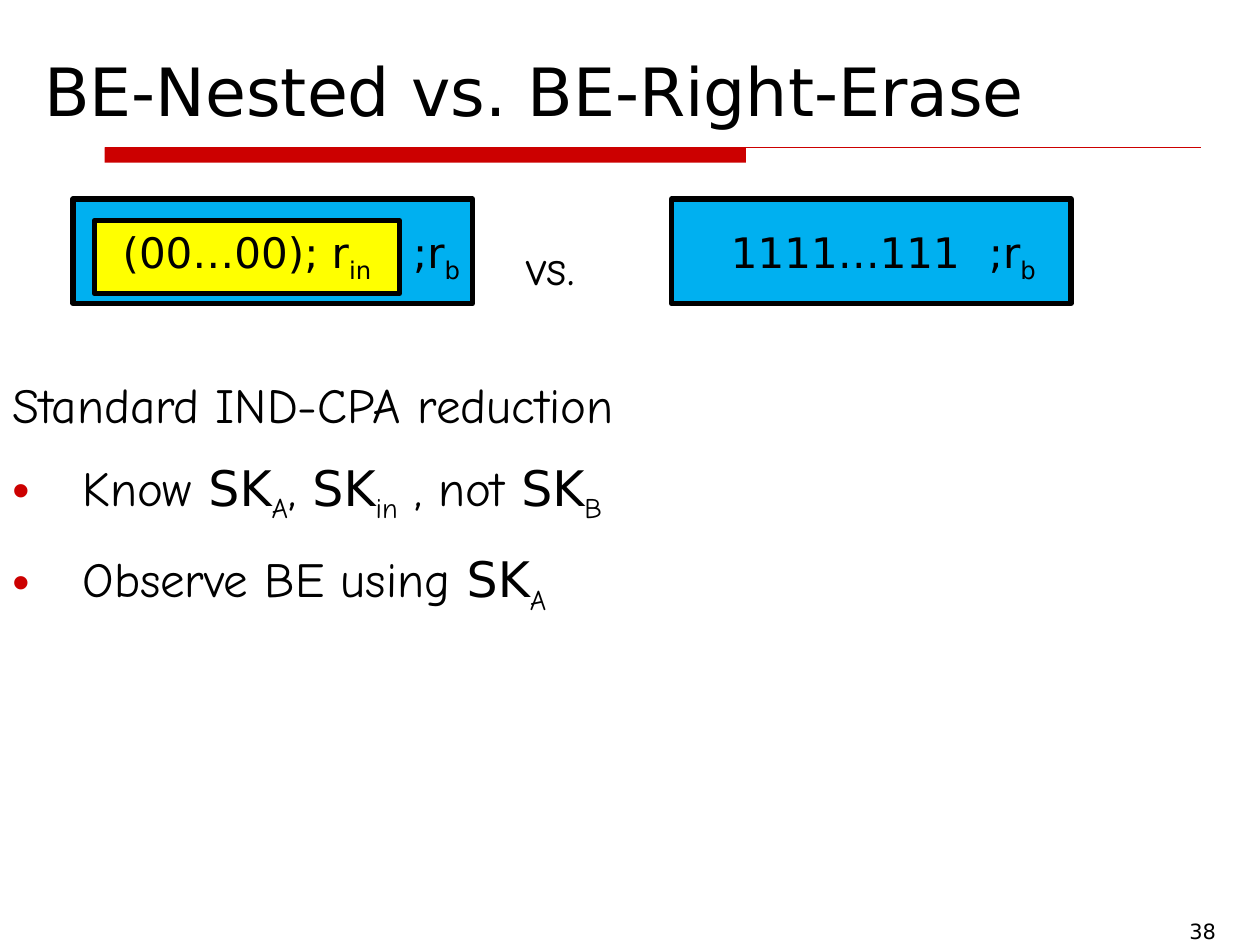
import dataclasses

import pptx
import pptx.dml.color
import pptx.enum.shapes
import pptx.enum.text
import pptx.oxml.ns
import pptx.util
from lxml import etree
from pptx.util import Inches

ALIGN = pptx.enum.text.PP_ALIGN
ANCHOR = pptx.enum.text.MSO_ANCHOR


@dataclasses.dataclass(frozen=True)
class Theme:
    """Colours, fonts and type sizes of the deck."""
    ink: str = "000000"
    accent: str = "CC0000"
    outer: str = "00B0F0"
    inner: str = "FFFF00"
    sans: str = "DejaVu Sans"
    hand: str = "Comic Neue"
    title: int = 38
    body: int = 28
    label: int = 24
    number: int = 12


THEME = Theme()


def color(value):
    """Turn a hex string into a colour."""
    return pptx.dml.color.RGBColor.from_string(value)


def add_child(parent, tag, **attributes):
    """Append a DrawingML element to a parent and return it."""
    return etree.SubElement(parent, pptx.oxml.ns.qn(tag), attributes)


def format_paragraph(paragraph, spaced, bullet):
    """Give a paragraph its hanging indent, space before and bullet."""
    properties = paragraph._p.get_or_add_pPr()
    if spaced:
        properties.set("marL", str(Inches(0.56)))
        properties.set("indent", str(Inches(-0.56)))
        add_child(add_child(properties, "a:spcBef"), "a:spcPct", val="50000")
    if bullet:
        add_child(add_child(properties, "a:buClr"), "a:srgbClr", val=THEME.accent)
        add_child(properties, "a:buFont", typeface="Arial")
        add_child(properties, "a:buChar", char="•")
    elif spaced:
        add_child(properties, "a:buNone")


def write_text(shape, paragraphs, size, font=THEME.sans, align=ALIGN.LEFT,
               anchor=ANCHOR.TOP, spaced=False, bullets_from=None):
    """Fill a shape with paragraphs of (text, style) runs; style is '', 'sub' or 'key'."""
    frame = shape.text_frame
    frame.word_wrap = True
    frame.auto_size = pptx.enum.text.MSO_AUTO_SIZE.NONE
    frame.vertical_anchor = anchor
    for index, runs in enumerate(paragraphs):
        paragraph = frame.add_paragraph() if index else frame.paragraphs[0]
        paragraph.alignment = align
        bullet = bullets_from is not None and index >= bullets_from
        format_paragraph(paragraph, spaced, bullet)
        for text, style in runs:
            run = paragraph.add_run()
            run.text = text
            run.font.size = pptx.util.Pt(size)
            run.font.name = THEME.sans if style == "key" else font
            run.font.color.rgb = color(THEME.ink)
            if style == "sub":
                run.font._element.set("baseline", "-25000")


def add_text(slide, box, paragraphs, **text_format):
    """Add a text box at (left, top, width, height) in inches."""
    shape = slide.shapes.add_textbox(*map(Inches, box))
    write_text(shape, paragraphs, **text_format)


def add_rectangle(slide, box, fill, outlined=True):
    """Add a filled rectangle, with a heavy outline if asked."""
    kind = pptx.enum.shapes.MSO_SHAPE.RECTANGLE
    shape = slide.shapes.add_shape(kind, *map(Inches, box))
    shape.shadow.inherit = False
    shape.fill.solid()
    shape.fill.fore_color.rgb = color(fill)
    if outlined:
        shape.line.color.rgb = color(THEME.ink)
        shape.line.width = pptx.util.Pt(3)
    else:
        shape.line.fill.background()


def add_title(slide, box, text):
    """Place the slide title."""
    title = slide.shapes.title
    title.left, title.top, title.width, title.height = map(Inches, box)
    write_text(title, [[(text, "")]], size=THEME.title, anchor=ANCHOR.BOTTOM)


def add_title_rule(slide, box, bar_width):
    """Draw a thin rule along the top of the box with a thick bar at its left."""
    left, top, width, height = box
    add_rectangle(slide, (left, top, bar_width, height), THEME.accent, outlined=False)
    ends = map(Inches, (left, top, left + width, top))
    rule = slide.shapes.add_connector(pptx.enum.shapes.MSO_CONNECTOR.STRAIGHT, *ends)
    rule.line.color.rgb = color(THEME.accent)
    rule.line.width = pptx.util.Pt(0.75)
    add_child(rule._element.spPr, "a:effectLst")


def add_ciphertext(slide, box, message, nested=False):
    """Draw an encryption box with its message and randomness, optionally nested."""
    left, top, width, height = box
    key_width, text_top = 0.75, top + 0.17
    add_rectangle(slide, box, THEME.outer)
    if nested:
        add_rectangle(slide, (left + 0.17, text_top, 2.42, 0.58), THEME.inner)
    add_text(slide, (left + 0.09, text_top, 2.58, 0.5), [message],
             size=THEME.label, align=ALIGN.CENTER)
    add_text(slide, (left + width - key_width, text_top, key_width, 0.5),
             [[(";r", ""), ("b", "sub")]], size=THEME.label,
             align=ALIGN.RIGHT if nested else ALIGN.LEFT)


def add_comparison(slide, box):
    """Set the nested and the erased ciphertext at the two ends of the box."""
    left, top, width, height = box
    block = 3.17
    add_ciphertext(slide, (left, top, block, height),
                   [("(00…00); r", ""), ("in", "sub")], nested=True)
    add_ciphertext(slide, (left + width - block, top, block, height),
                   [("1111…111", "")])
    add_text(slide, (left + 3.5, top + 0.25, 0.83, 0.57), [[("vs.", "")]],
             size=THEME.body, font=THEME.hand, spaced=True)


def add_argument(slide, box):
    """Write the reduction argument with its bullets."""
    key = ("SK", "key")
    paragraphs = [
        [("Standard IND-CPA reduction", "")],
        [("Know ", ""), key, ("A", "sub"), (", ", ""), key, ("in", "sub"),
         (" , not ", ""), key, ("B", "sub")],
        [("Observe BE using ", ""), key, ("A", "sub")],
    ]
    add_text(slide, box, paragraphs, size=THEME.body, font=THEME.hand,
             spaced=True, bullets_from=1)


def main():
    """Build and save the presentation."""
    presentation = pptx.Presentation()
    presentation.slide_width = Inches(10)
    presentation.slide_height = Inches(7.5)
    slide = presentation.slides.add_slide(presentation.slide_layouts.get_by_name("Title Only"))
    add_title_rule(slide, (0.83, 1.17, 8.7, 0.12), bar_width=5.09)
    add_title(slide, (0.25, 0.17, 9.42, 0.91), "BE-Nested vs. BE-Right-Erase")
    add_comparison(slide, (0.58, 1.58, 7.92, 0.83))
    add_argument(slide, (0, 2.92, 7.08, 1.99))
    add_text(slide, (7.58, 7.24, 2.17, 0.52), [[("38", "")]],
             size=THEME.number, align=ALIGN.RIGHT)
    presentation.save("out.pptx")


if __name__ == "__main__":
    main()
